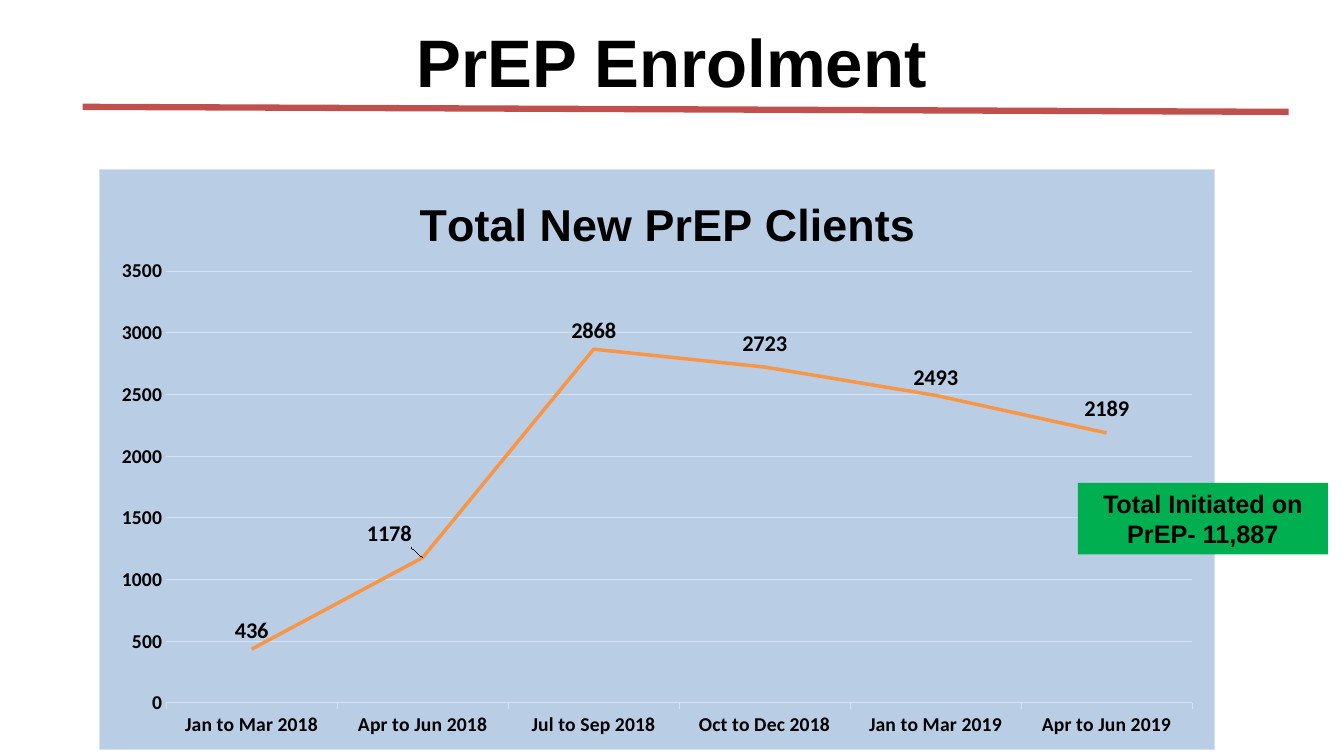
import pptx
import pptx.chart.data
import pptx.dml.color
import pptx.enum.chart
import pptx.enum.shapes
import pptx.enum.text
import pptx.oxml
import pptx.oxml.ns
import pptx.util

HEADING = "PrEP Enrolment"
CHART_TITLE = "Total New PrEP Clients"
TOTAL = "Total Initiated on PrEP- 11,887"
NEW_CLIENTS = {
    "Jan to Mar 2018": 436,
    "Apr to Jun 2018": 1178,
    "Jul to Sep 2018": 2868,
    "Oct to Dec 2018": 2723,
    "Jan to Mar 2019": 2493,
    "Apr to Jun 2019": 2189,
}
LABEL_SHIFTS = {1: (-0.03, -0.01), 3: (0, -0.01), 5: (0, -0.01)}
TITLE_PLACE = {"x": 0.28, "y": 0.03}
PLOT_PLACE = {"x": 0.06, "y": 0.175, "w": 0.92, "h": 0.745}

RGBColor = pptx.dml.color.RGBColor
BLACK = RGBColor(0x00, 0x00, 0x00)
RED = RGBColor(0xC0, 0x50, 0x4D)
GREEN = RGBColor(0x00, 0xB0, 0x50)
ORANGE = RGBColor(0xF7, 0x96, 0x46)
PANEL = RGBColor(0xB9, 0xCD, 0xE5)
PALE = RGBColor(0xD4, 0xE3, 0xF4)

Pt = pptx.util.Pt
qn = pptx.oxml.ns.qn
CHART_NS = pptx.oxml.ns.nsdecls("c", "a")


def inches(*lengths):
    return [pptx.util.Inches(length) for length in lengths]


def style(font, size, face):
    font.size = Pt(size)
    font.name = face
    font.bold = True
    font.color.rgb = BLACK


def layout(places, edge=True, inner=False):
    target = '<c:layoutTarget val="inner"/>' if inner else ""
    modes = '<c:xMode val="edge"/><c:yMode val="edge"/>' if edge else ""
    values = "".join(f'<c:{key} val="{value}"/>' for key, value in places.items())
    return pptx.oxml.parse_xml(
        f"<c:layout {CHART_NS}><c:manualLayout>{target}{modes}{values}"
        "</c:manualLayout></c:layout>")


def place_after(sibling, element):
    parent = sibling.getparent()
    for old in parent.findall(qn("c:layout")):
        parent.remove(old)
    sibling.addnext(element)


def add_heading(slide):
    heading = slide.shapes.title
    heading.left, heading.top, heading.width, heading.height = inches(0.82, -0.02, 11.69, 1.25)
    heading.text_frame.text = HEADING
    heading.text_frame.vertical_anchor = pptx.enum.text.MSO_ANCHOR.MIDDLE
    paragraph = heading.text_frame.paragraphs[0]
    paragraph.alignment = pptx.enum.text.PP_ALIGN.CENTER
    style(paragraph.font, 48, "Arial")


def style_axes(chart):
    marks = pptx.enum.chart.XL_TICK_MARK
    for axis in (chart.category_axis, chart.value_axis):
        style(axis.tick_labels.font, 14, "Calibri")
        axis.minor_tick_mark = marks.NONE
    periods, clients = chart.category_axis, chart.value_axis
    periods.major_tick_mark = marks.OUTSIDE
    clients.major_tick_mark = marks.NONE
    clients.minimum_scale, clients.maximum_scale, clients.major_unit = 0, 3500, 500
    clients.format.line.fill.background()
    for line in (periods.format.line, clients.major_gridlines.format.line):
        line.color.rgb = PALE
        line.width = Pt(0.75)


def style_series(series):
    above = pptx.enum.chart.XL_LABEL_POSITION.ABOVE
    series.smooth = False
    series.marker.style = pptx.enum.chart.XL_MARKER_STYLE.NONE
    series.format.line.color.rgb = ORANGE
    series.format.line.width = Pt(2.5)
    labels = series.data_labels
    labels.show_value = True
    labels.position = above
    style(labels.font, 16, "Calibri")
    for index, (across, down) in LABEL_SHIFTS.items():
        label = series.points[index].data_label
        style(label.font, 16, "Calibri")
        label.position = above
        idx = labels._element.xpath(f'c:dLbl/c:idx[@val="{index}"]')[0]
        place_after(idx, layout({"x": across, "y": down}, edge=False))


def add_enrolment_chart(slide):
    enrolment = pptx.chart.data.CategoryChartData()
    enrolment.categories = list(NEW_CLIENTS)
    enrolment.add_series("Series 1", list(NEW_CLIENTS.values()))
    chart = slide.shapes.add_chart(
        pptx.enum.chart.XL_CHART_TYPE.LINE_STACKED,
        *inches(0.98, 1.68, 11.07, 5.76), enrolment).chart
    chart.has_legend = False
    chart.font.size = Pt(10)
    chart.font.name = "Calibri"
    chart.font.color.rgb = BLACK
    chart.plots[0].vary_by_categories = False
    chart.has_title = True
    chart.chart_title.text_frame.text = CHART_TITLE
    style(chart.chart_title.text_frame.paragraphs[0].font, 32, "Arial")
    style_axes(chart)
    style_series(chart.plots[0].series[0])

    space = chart._chartSpace
    place_after(space.find(".//" + qn("c:title") + "/" + qn("c:tx")), layout(TITLE_PLACE))
    plot_area = space.find(".//" + qn("c:plotArea"))
    for old in plot_area.findall(qn("c:layout")):
        plot_area.remove(old)
    plot_area.insert(0, layout(PLOT_PLACE, inner=True))
    space.find(qn("c:chart")).addnext(pptx.oxml.parse_xml(
        f'<c:spPr {CHART_NS}><a:solidFill><a:srgbClr val="{PANEL}"/></a:solidFill>'
        f'<a:ln w="{Pt(0.75)}"><a:solidFill><a:srgbClr val="{PALE}"/></a:solidFill></a:ln></c:spPr>'))


def add_total(slide):
    total = slide.shapes.add_shape(
        pptx.enum.shapes.MSO_SHAPE.RECTANGLE, *inches(10.69, 4.79, 2.48, 0.71))
    total.shadow.inherit = False
    total.fill.solid()
    total.fill.fore_color.rgb = GREEN
    total.line.fill.background()
    total.text_frame.word_wrap = True
    total.text_frame.text = TOTAL
    paragraph = total.text_frame.paragraphs[0]
    paragraph.alignment = pptx.enum.text.PP_ALIGN.CENTER
    style(paragraph.font, 18, "Arial")


def add_underline(slide):
    underline = slide.shapes.add_connector(
        pptx.enum.shapes.MSO_CONNECTOR.STRAIGHT, *inches(0.82, 1.06, 12.78, 1.11))
    underline.line.color.rgb = RED
    underline.line.width = Pt(4.5)
    underline._element.spPr.append(pptx.oxml.parse_xml(
        f'<a:effectLst {pptx.oxml.ns.nsdecls("a")}/>'))


def main():
    deck = pptx.Presentation()
    deck.slide_width, deck.slide_height = inches(13.33, 7.5)
    slide = deck.slides.add_slide(deck.slide_layouts[5])
    add_heading(slide)
    add_enrolment_chart(slide)
    add_total(slide)
    add_underline(slide)
    deck.save("out.pptx")


if __name__ == "__main__":
    main()
